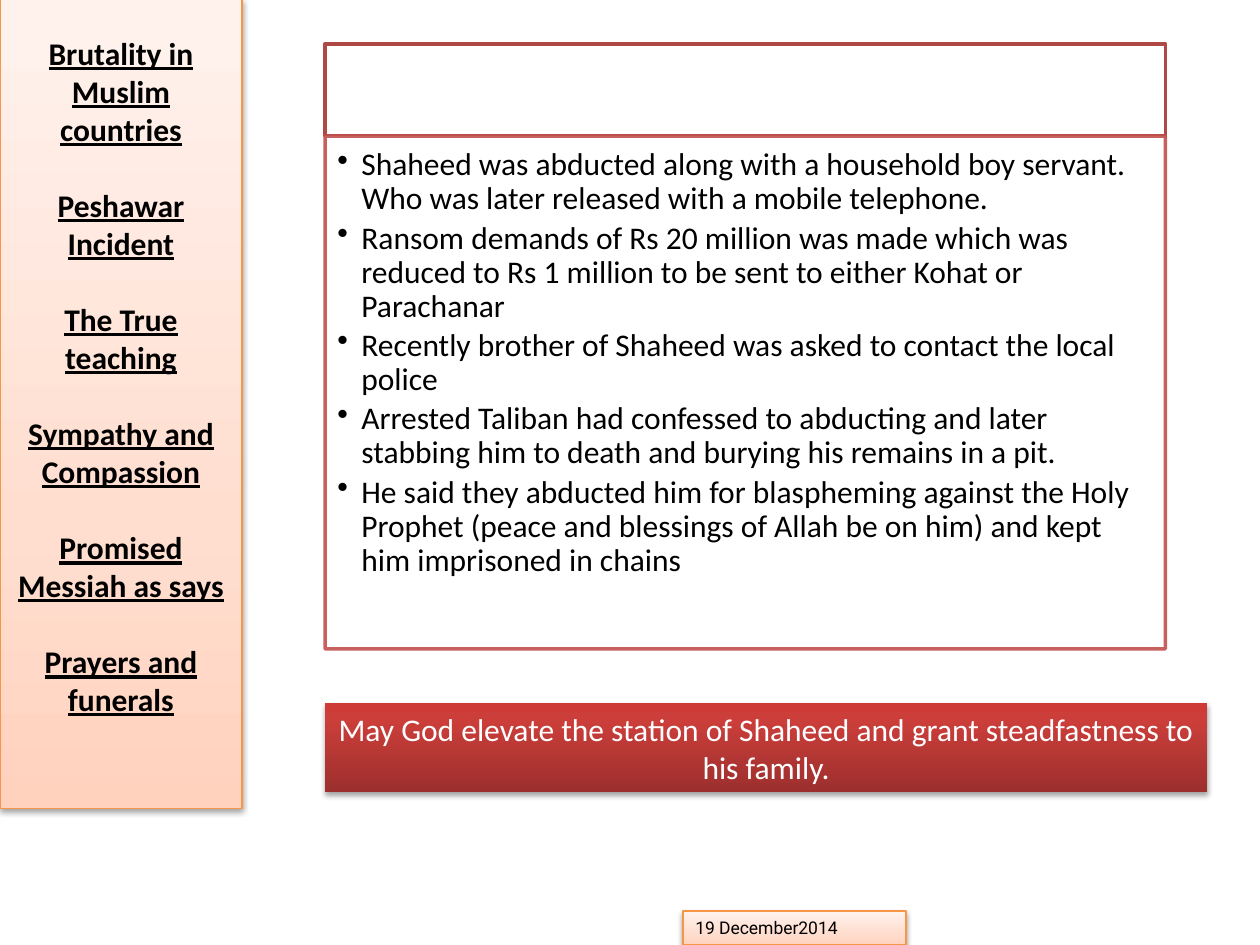
from lxml import etree
from pptx import Presentation
from pptx import util as u
from pptx.dml.color import RGBColor
from pptx.enum import shapes, text
from pptx.oxml.ns import qn

COLORS = {
    "black": "000000", "white": "FFFFFF", "orange": "F79646",
    "heading_line": "AE4946", "body_line": "C0504D",
}
PEACH = [(0, "FFD2BD"), (35, "FFDED0"), (100, "FFF2ED")]
RED = [(0, "9C2F2D"), (80, "CB3E3A"), (100, "CE3B37")]

TOPICS = [
    "Brutality in Muslim countries", "Peshawar Incident", "The True teaching",
    "Sympathy and Compassion", "Promised Messiah as says", "Prayers and funerals",
]
EVENTS = [
    "Shaheed was abducted along with a household boy servant. Who was later released with a mobile telephone.",
    "Ransom demands of Rs 20 million was made which was reduced to Rs 1 million to be sent to either Kohat or Parachanar",
    "Recently brother of Shaheed was asked to contact the local police",
    "Arrested Taliban had confessed to abducting and later stabbing him to death and burying his remains in a pit.",
    "He said they abducted him for blaspheming against the Holy Prophet (peace and blessings of Allah be on him) and kept him imprisoned in chains",
]

presentation = Presentation()
presentation.slide_width, presentation.slide_height = u.Inches(10), u.Inches(7.5)
slide = presentation.slides.add_slide(presentation.slide_layouts[6])


def add_box(left, top, width, height, line=None, weight=0.75, stops=None):
    """Rectangle with a white fill, or a vertical gradient and soft shadow."""
    box = slide.shapes.add_shape(
        shapes.MSO_SHAPE.RECTANGLE, *map(u.Inches, (left, top, width, height)))
    box.shadow.inherit = False
    if line:
        box.line.color.rgb = RGBColor.from_string(COLORS[line])
        box.line.width = u.Pt(weight)
    else:
        box.line.fill.background()
    if not stops:
        box.fill.solid()
        box.fill.fore_color.rgb = RGBColor.from_string(COLORS["white"])
        return box
    box.fill.gradient()
    box.fill.gradient_angle = 90
    properties = box._element.spPr
    stop_list = properties.find(".//" + qn("a:gsLst"))
    for stop in list(stop_list):
        stop_list.remove(stop)
    for position, color in stops:
        stop = etree.SubElement(stop_list, qn("a:gs"), pos=str(position * 1000))
        etree.SubElement(stop, qn("a:srgbClr"), val=color)
    shadow = etree.SubElement(
        properties.find(qn("a:effectLst")), qn("a:outerShdw"), blurRad="40000",
        dist="21000", dir="5400000", rotWithShape="0")
    shade = etree.SubElement(shadow, qn("a:srgbClr"), val=COLORS["black"])
    etree.SubElement(shade, qn("a:alpha"), val="37000")
    return box


def write(shape, lines, size, color="black", name="Calibri",
          align=text.PP_ALIGN.LEFT, anchor=text.MSO_ANCHOR.TOP):
    """Fill a shape with one paragraph per line and return the paragraphs."""
    frame = shape.text_frame
    frame.word_wrap = True
    frame.vertical_anchor = anchor
    frame.text = "\n".join(lines)
    for paragraph in frame.paragraphs:
        paragraph.alignment = align
        paragraph.font.size = u.Pt(size)
        paragraph.font.name = name
        paragraph.font.color.rgb = RGBColor.from_string(COLORS[color])
    return frame.paragraphs


# Columns and rows
content_left, content_width = 2.58, 6.67
heading_top, body_top, body_height = 0.35, 1.08, 4.07

# Closing prayer
prayer = add_box(content_left, 5.58, 7, 0.71, stops=RED)
write(prayer, ["May God elevate the station of Shaheed and grant steadfastness to his family."],
      18, "white", align=text.PP_ALIGN.CENTER, anchor=text.MSO_ANCHOR.MIDDLE)

# Date
date = add_box(5.42, 7.23, 1.77, 0.27, "orange", stops=PEACH)
write(date, ["19 December2014"], 10, name="Roboto")

# Sidebar of topics, one line of space between them
sidebar = add_box(0, -0.01, 1.92, 6.43, "orange", stops=PEACH)
sidebar.text_frame.margin_top = u.Inches(0.28)
for paragraph in write(sidebar, TOPICS, 18, align=text.PP_ALIGN.CENTER):
    paragraph.font.bold = paragraph.font.underline = True
    paragraph.space_after = u.Pt(22)

# Empty heading above the body
add_box(content_left, heading_top, content_width, body_top - heading_top, "heading_line", 2)

# Body with bulleted events
body = add_box(content_left, body_top, content_width, body_height, "body_line", 2)
line_color = body._element.spPr.find(qn("a:ln")).find(".//" + qn("a:srgbClr"))
etree.SubElement(line_color, qn("a:alpha"), val="90000")
frame = body.text_frame
frame.margin_left = frame.margin_top = u.Inches(0.1)
frame.margin_right, frame.margin_bottom = u.Inches(0.14), u.Inches(0.16)
for paragraph in write(body, EVENTS, 18):
    paragraph.line_spacing = 0.9
    paragraph.space_after = u.Pt(3)
    settings = paragraph._p.get_or_add_pPr()
    indent = u.Inches(0.19)
    settings.set("marL", str(indent))
    settings.set("indent", str(-indent))
    bullet = etree.Element(qn("a:buChar"), char="•")
    settings.find(qn("a:defRPr")).addprevious(bullet)

presentation.save("out.pptx")
